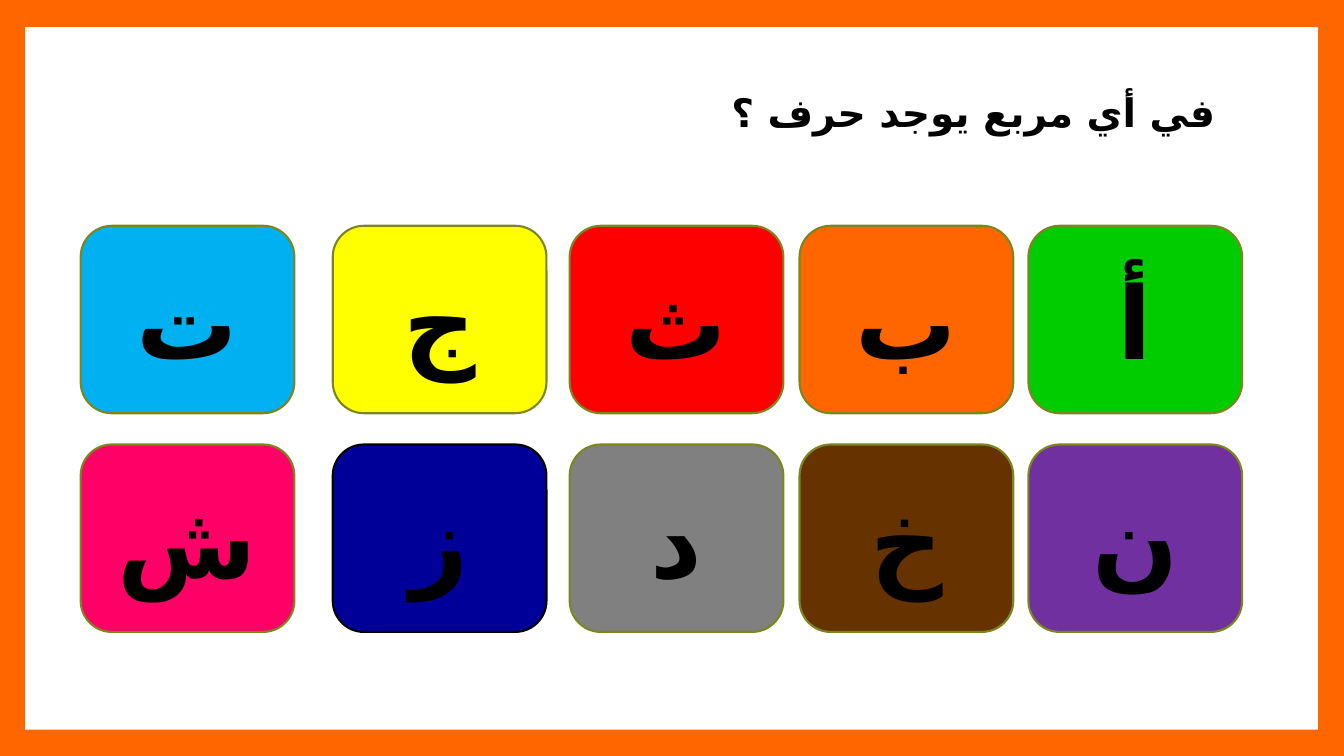
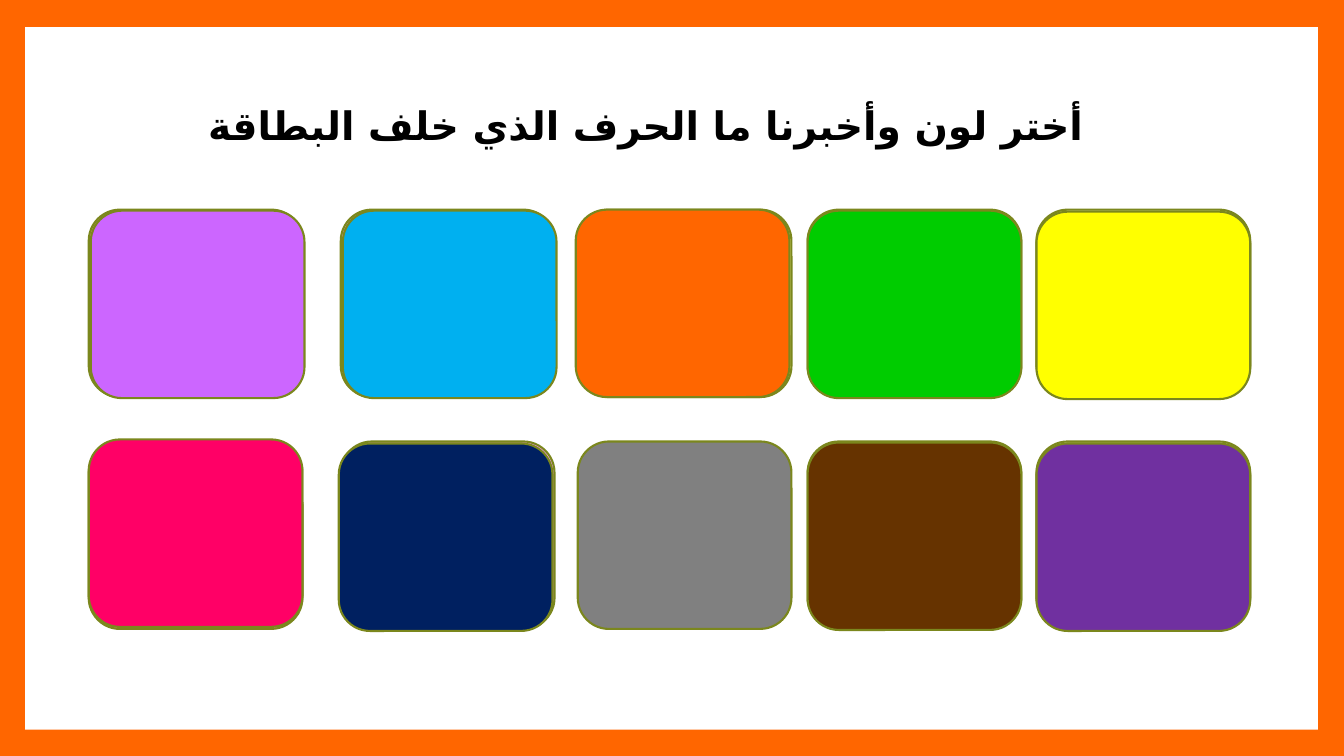
from lxml import etree
from pptx import Presentation
from pptx import util as u
from pptx.dml.color import RGBColor
from pptx.enum import shapes, text
from pptx.oxml.ns import qn

WIDTH, HEIGHT = 13.33, 7.5
FONT, ARABIC_FONT = "Cabin", "DejaVu Sans"
INK, ORANGE, WHITE, OLIVE = "000000", "FF6600", "FFFFFF", "7B871D"
PANEL = (0.25, 0.27, 12.82, 6.97)
CARD_WIDTH, CARD_HEIGHT = 2.12, 1.86
COLUMNS = (10.2, 7.93, 5.65, 3.3, 0.8)
TITLE_SIZE = (9.23, 0.57)

LETTERS = {
    "title": "في أي مربع يوجد حرف ؟",
    "title_at": (2.92, 0.83),
    "rows": (2.24, 4.41),
    "cards": [
        [("أ", "00CC00"), ("ب", ORANGE), ("ث", "FF0000"), ("ج", "FFFF00"), ("ت", "00B0F0")],
        [("ن", "7030A0"), ("خ", "663300"), ("د", "808080"), ("ز", "000099"), ("ش", "FF0066")],
    ],
}
BLACK_OUTLINE = "ز"

COLOURS = {
    "title": "أختر لون وأخبرنا ما الحرف الذي خلف البطاقة",
    "title_at": (1.61, 0.95),
    "rows": (2.08, 4.38),
    "shift": 0.08,
    "backs": [
        ["E2EBA0", "CC9900", "FFFF99", "FF99FF", "EC987D"],
        ["E2EBA0", "CC9900", None, "FF99FF", "EC987D"],
    ],
    "covers": [
        [("FFFF00", 0, 0.02), ("00CC00", 0, 0.01), (ORANGE, -0.02, 0),
         ("00B0F0", 0.02, 0.01), ("CC66FF", 0.02, 0.01)],
        [("7030A0", 0, 0.02), ("663300", 0, 0.01), ("808080", 0, 0),
         ("002060", -0.02, 0.02), ("FF0066", 0, -0.02)],
    ],
}


def colour(value):
    return RGBColor.from_string(value)


def write(shape, words, size, alignment):
    shape.text_frame.text = words
    paragraph = shape.text_frame.paragraphs[0]
    paragraph.alignment = alignment
    paragraph._p.get_or_add_pPr().set("rtl", "1")
    run = paragraph.runs[0]
    run.font.size = u.Pt(size)
    run.font.name = FONT
    run.font.bold = True
    run.font.color.rgb = colour(INK)
    properties = run._r.get_or_add_rPr()
    properties.set("lang", "ar-SA")
    etree.SubElement(properties, qn("a:cs")).set("typeface", ARABIC_FONT)


def add_block(slide, kind, box, fill, outline=None):
    shape = slide.shapes.add_shape(kind, *map(u.Inches, box))
    shape.shadow.inherit = False
    shape.fill.solid()
    shape.fill.fore_color.rgb = colour(fill)
    if outline:
        shape.line.color.rgb = colour(outline)
        shape.line.width = u.Pt(1.5)
    else:
        shape.line.fill.background()
    return shape


def add_card(slide, left, top, fill, outline=OLIVE):
    box = (left, top, CARD_WIDTH, CARD_HEIGHT)
    return add_block(slide, shapes.MSO_SHAPE.ROUNDED_RECTANGLE, box, fill, outline)


def add_slide(presentation, content):
    slide = presentation.slides.add_slide(presentation.slide_layouts[5])
    title = slide.shapes.title
    title.left, title.top, title.width, title.height = map(
        u.Inches, content["title_at"] + TITLE_SIZE)
    write(title, content["title"], 28, text.PP_ALIGN.RIGHT)
    frame = title.text_frame
    frame.word_wrap = True
    frame.vertical_anchor = text.MSO_ANCHOR.TOP
    frame.auto_size = text.MSO_AUTO_SIZE.SHAPE_TO_FIT_TEXT
    return slide


def set_master(presentation, slide):
    master = presentation.slide_master
    master.background.fill.solid()
    master.background.fill.fore_color.rgb = colour(ORANGE)
    panel = add_block(slide, shapes.MSO_SHAPE.RECTANGLE, PANEL, WHITE)
    panel._element.nvSpPr.cNvPr.set("id", "99")
    master.shapes._spTree.insert(2, panel._element)


def fill_letters(slide):
    for top, cards in zip(LETTERS["rows"], LETTERS["cards"]):
        for left, (letter, fill) in zip(COLUMNS, cards):
            outline = INK if letter == BLACK_OUTLINE else OLIVE
            card = add_card(slide, left, top, fill, outline)
            card.text_frame.vertical_anchor = text.MSO_ANCHOR.MIDDLE
            write(card, letter, 72, text.PP_ALIGN.CENTER)


def fill_colours(slide):
    for top, backs, covers in zip(COLOURS["rows"], COLOURS["backs"], COLOURS["covers"]):
        for column, back, (cover, across, down) in zip(COLUMNS, backs, covers):
            left = column + COLOURS["shift"]
            if back:
                add_card(slide, left, top, back)
            add_card(slide, left + across, top + down, cover)


def main():
    presentation = Presentation()
    presentation.slide_width = u.Inches(WIDTH)
    presentation.slide_height = u.Inches(HEIGHT)
    letters = add_slide(presentation, LETTERS)
    set_master(presentation, letters)
    fill_letters(letters)
    fill_colours(add_slide(presentation, COLOURS))
    presentation.save("out.pptx")


if __name__ == "__main__":
    main()
